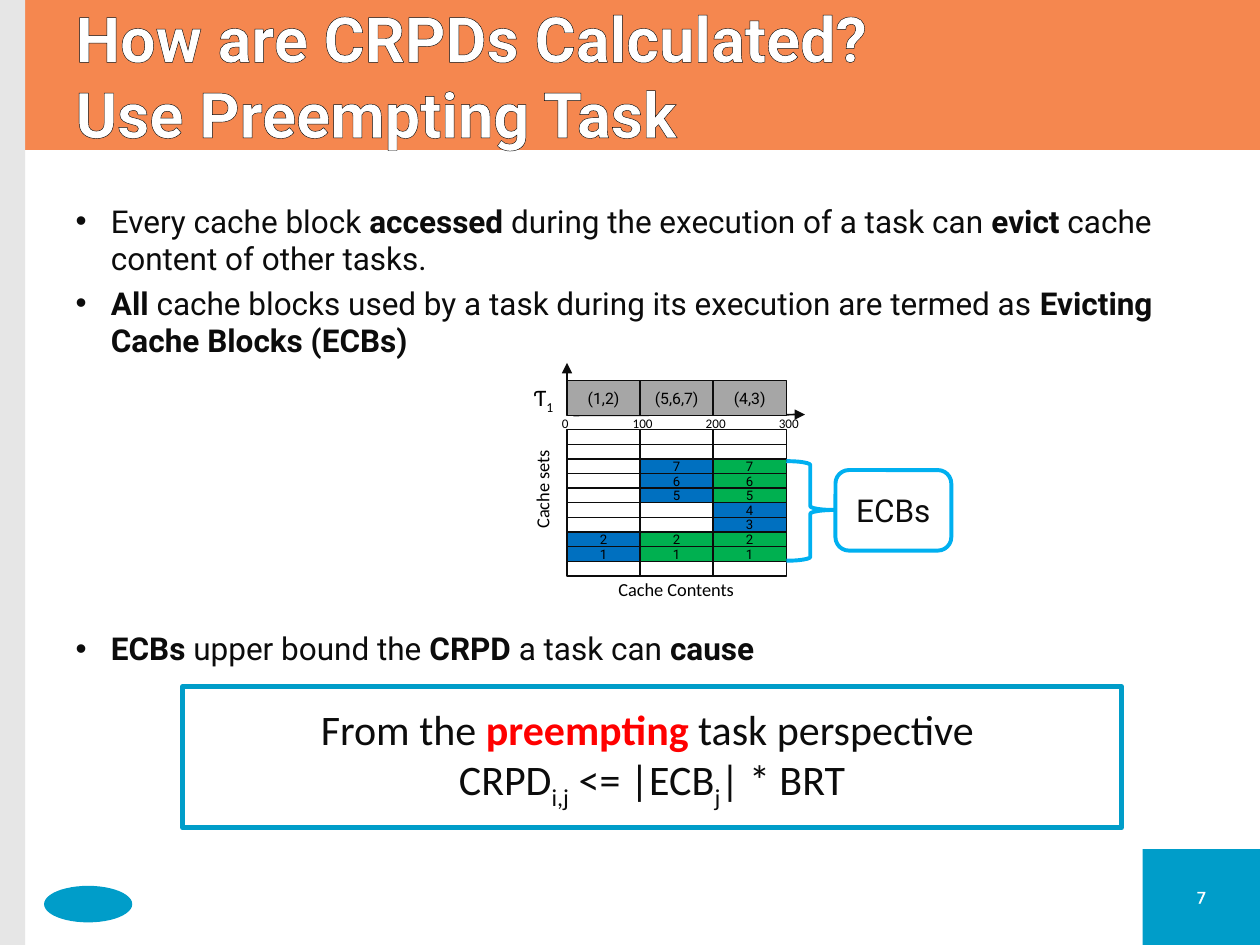
from dataclasses import dataclass
from typing import NamedTuple

from lxml import etree
from pptx import Presentation
from pptx.dml.color import RGBColor
from pptx.enum.shapes import MSO_CONNECTOR, MSO_SHAPE
from pptx.enum.text import MSO_ANCHOR, MSO_AUTO_SIZE, PP_ALIGN
from pptx.oxml.ns import qn
from pptx.util import Pt

RECT, ROUND = MSO_SHAPE.RECTANGLE, MSO_SHAPE.ROUNDED_RECTANGLE
OVAL, BRACE = MSO_SHAPE.OVAL, MSO_SHAPE.LEFT_BRACE
LINE = MSO_CONNECTOR.STRAIGHT
TOP, MID = MSO_ANCHOR.TOP, MSO_ANCHOR.MIDDLE
LEFT, MIDDLE = PP_ALIGN.LEFT, PP_ALIGN.CENTER
INK, BLACK, WHITE, RED = "0C0C0C", "000000", "FFFFFF", "FF0000"
TEAL, ORANGE, PALE, GRAY = "009DC9", "F5874F", "E6E6E6", "A6A6A6"
BLUE, GREEN, SKY = "0070C0", "00B050", "00B0F0"


class Box(NamedTuple):
    x: float
    y: float
    w: float
    h: float


class Run(NamedTuple):
    text: str
    bold: bool = False
    color: str = ""
    base: int = 0


@dataclass
class Style:
    size: float
    name: str = "Roboto"
    color: str = BLACK
    align: PP_ALIGN = MIDDLE
    anchor: MSO_ANCHOR = MID
    inset: float = 0
    wrap: bool = True
    edge: tuple = ()  # text outline: colour and width


CELL = Style(7.5)
TASK = Style(9)
TICK = Style(7.5, "Calibri")
NOTE = Style(10.5, "Calibri", align=LEFT, anchor=TOP, inset=7.2)
NAME = Style(13.5, "Calibri", align=LEFT, anchor=TOP, inset=7.2, wrap=False)
TAG = Style(18, color=INK)
RULE = Style(24, "Calibri", INK, inset=7.2)
PAGE = Style(9, color=WHITE, edge=(WHITE, 1.45))
HEAD = Style(36, color=WHITE, align=LEFT, inset=7.2, edge=(INK, 1))
LIST = Style(18, color=INK, align=LEFT, anchor=TOP, inset=7.2)


def rgb(code: str) -> RGBColor:
    return RGBColor.from_string(code)


def put(obj, **vals) -> None:
    for key, val in vals.items():
        setattr(obj, key, val)


def place(shape, box: Box) -> None:
    put(shape, left=Pt(box.x), top=Pt(box.y), width=Pt(box.w), height=Pt(box.h))


def trace(font, code: str, width: float) -> None:
    """Outline the letters of a run."""
    line = etree.Element(qn("a:ln"), w=str(Pt(width)))
    fill = etree.SubElement(line, qn("a:solidFill"))
    etree.SubElement(fill, qn("a:srgbClr"), val=code)
    font._element.insert(0, line)


def fill_para(para, runs: list[Run], style: Style) -> None:
    para.alignment = style.align
    for item in runs:
        for n, part in enumerate(item.text.split("\n")):
            if n:
                para.add_line_break()
            run = para.add_run()
            run.text = part
            put(run.font, name=style.name, size=Pt(style.size), bold=item.bold)
            run.font.color.rgb = rgb(item.color or style.color)
            if item.base:
                run.font._element.set("baseline", str(item.base * 1000))
            if style.edge:
                trace(run.font, *style.edge)


def set_frame(shape, style: Style):
    frame, gap = shape.text_frame, Pt(style.inset)
    put(frame, word_wrap=style.wrap, auto_size=MSO_AUTO_SIZE.NONE,
        vertical_anchor=style.anchor, margin_left=gap, margin_right=gap,
        margin_top=gap // 2, margin_bottom=gap // 2)
    return frame


def write(shape, runs: list[Run], style: Style) -> None:
    fill_para(set_frame(shape, style).paragraphs[0], runs, style)


def draw(slide, kind, box: Box, fill: str = "", line: str = "", width: float = 0.75):
    shape = slide.shapes.add_shape(kind, *map(Pt, box))
    shape.shadow.inherit = False
    if fill:
        shape.fill.solid()
        shape.fill.fore_color.rgb = rgb(fill)
    else:
        shape.fill.background()
    if line:
        shape.line.color.rgb = rgb(line)
        shape.line.width = Pt(width)
    else:
        shape.line.fill.background()
    return shape


def label(slide, box: Box, runs: list[Run], style: Style):
    shape = slide.shapes.add_textbox(*map(Pt, box))
    write(shape, runs, style)
    return shape


def arrow(slide, x1: float, y1: float, x2: float, y2: float, width: float) -> None:
    link = slide.shapes.add_connector(LINE, *map(Pt, (x1, y1, x2, y2)))
    link.line.color.rgb = rgb(INK)
    link.line.width = Pt(width)
    etree.SubElement(link.line._get_or_add_ln(), qn("a:tailEnd"), type="triangle")
    etree.SubElement(link._element.spPr, qn("a:effectLst"))


def bullets(shape, items: list[tuple[float, list[Run]]]) -> None:
    frame = set_frame(shape, LIST)
    for n, (gap, runs) in enumerate(items):
        para = frame.add_paragraph() if n else frame.paragraphs[0]
        props = para._p.get_or_add_pPr()
        props.set("marL", str(Pt(20.16)))
        props.set("indent", str(-Pt(20.16)))
        etree.SubElement(props, qn("a:buChar"), char="•")
        para.space_before = Pt(gap)
        fill_para(para, runs, LIST)


POINTS = [
    (0, [Run("Every cache block "), Run("accessed", True),
         Run(" during the execution of a task can "), Run("evict", True),
         Run(" cache content of other tasks.")]),
    (3.6, [Run("All", True),
           Run(" cache blocks used by a task during its execution are termed as "),
           Run("Evicting Cache Blocks (ECBs)", True)]),
    (154.5, [Run("ECBs ", True), Run("upper bound the "), Run("CRPD", True),
             Run(" a task can "), Run("cause", True)]),
]
BOUND = [Run("From the "), Run("preempting ", True, RED),
         Run("task perspective \nCRPD"), Run("i,j", base=-25),
         Run(" <= |ECB"), Run("j", base=-25), Run("| * BRT")]

# Cache grid: each column maps block numbers to fills; block n is in row 9 - n.
GX, GY, CW, CH, ROWS = 324, 245.5, 41.76, 8.36, 10
LOADS = [
    ("(1,2)", dict.fromkeys((1, 2), BLUE)),
    ("(5,6,7)", dict.fromkeys((5, 6, 7), BLUE) | dict.fromkeys((1, 2), GREEN)),
    ("(4,3)", dict.fromkeys((3, 4), BLUE) | dict.fromkeys((1, 2, 5, 6, 7), GREEN)),
]


def cache(slide) -> None:
    """Draw the task timeline above the grid of cache sets."""
    arrow(slide, 327.6, 237.4, 460, 236.9, 1)
    arrow(slide, GX, 227.5, GX, 207.4, 0.75)
    label(slide, Box(298, 215.3, 26, 23.8), [Run("Ƭ"), Run("1", base=-25)], NAME)
    for col, (task, held) in enumerate(LOADS):
        x = GX + col * CW
        write(draw(slide, RECT, Box(x, 217.4, CW, 20.2), GRAY, INK), [Run(task)], TASK)
        for row in range(ROWS):
            num = 9 - row
            cell = draw(slide, RECT, Box(x, GY + row * CH, CW, CH), held.get(num, ""), INK)
            if num in held:
                write(cell, [Run(str(num))], CELL)
    for n in range(len(LOADS) + 1):
        wide = 28.8 if n else 10
        mid = GX + n * CW + (1.5 if n else -1)
        label(slide, Box(mid - wide / 2, 233.4, wide, 16.6), [Run(str(n * 100))], TICK)
    label(slide, Box(346.3, 326.9, 85, 20), [Run("Cache Contents")], NOTE)
    label(slide, Box(278, 267.1, 64, 20), [Run("Cache sets")], NOTE).rotation = 270


def main() -> None:
    deck = Presentation()
    put(deck, slide_width=Pt(720), slide_height=Pt(540))
    slide = deck.slides.add_slide(deck.slide_layouts[1])
    title, body = slide.placeholders

    draw(slide, RECT, Box(0, 0, 720, 85.7), ORANGE)
    draw(slide, RECT, Box(0, 0, 14.4, 540), PALE)
    draw(slide, RECT, Box(653, 485.3, 67, 54.7), TEAL)
    draw(slide, OVAL, Box(25.2, 506.2, 50.4, 20.9), TEAL)
    for shape, box in ((body, Box(36, 111.6, 648, 370.8)), (title, Box(36, 0, 648, 85.7))):
        place(shape, box)
        slide.shapes._spTree.append(shape._element)  # in front of the bands
    bullets(body, POINTS)
    write(title, [Run("How are CRPDs Calculated?\nUse Preempting Task", True)], HEAD)

    cache(slide)
    label(slide, Box(653, 498.2, 67, 28.8), [Run("7")], PAGE)
    write(draw(slide, RECT, Box(104.4, 392.4, 536.4, 80.6), "", TEAL, 3), BOUND, RULE)
    brace = draw(slide, BRACE, Box(449.3, 263.5, 27.4, 56.9), "", SKY, 2.25)
    brace.rotation = 180
    brace.adjustments[0], brace.adjustments[1] = 0.08, 0.51
    write(draw(slide, ROUND, Box(477.4, 268.6, 66.2, 46), WHITE, SKY, 2.25), [Run("ECBs")], TAG)
    deck.save("out.pptx")


if __name__ == "__main__":
    main()
